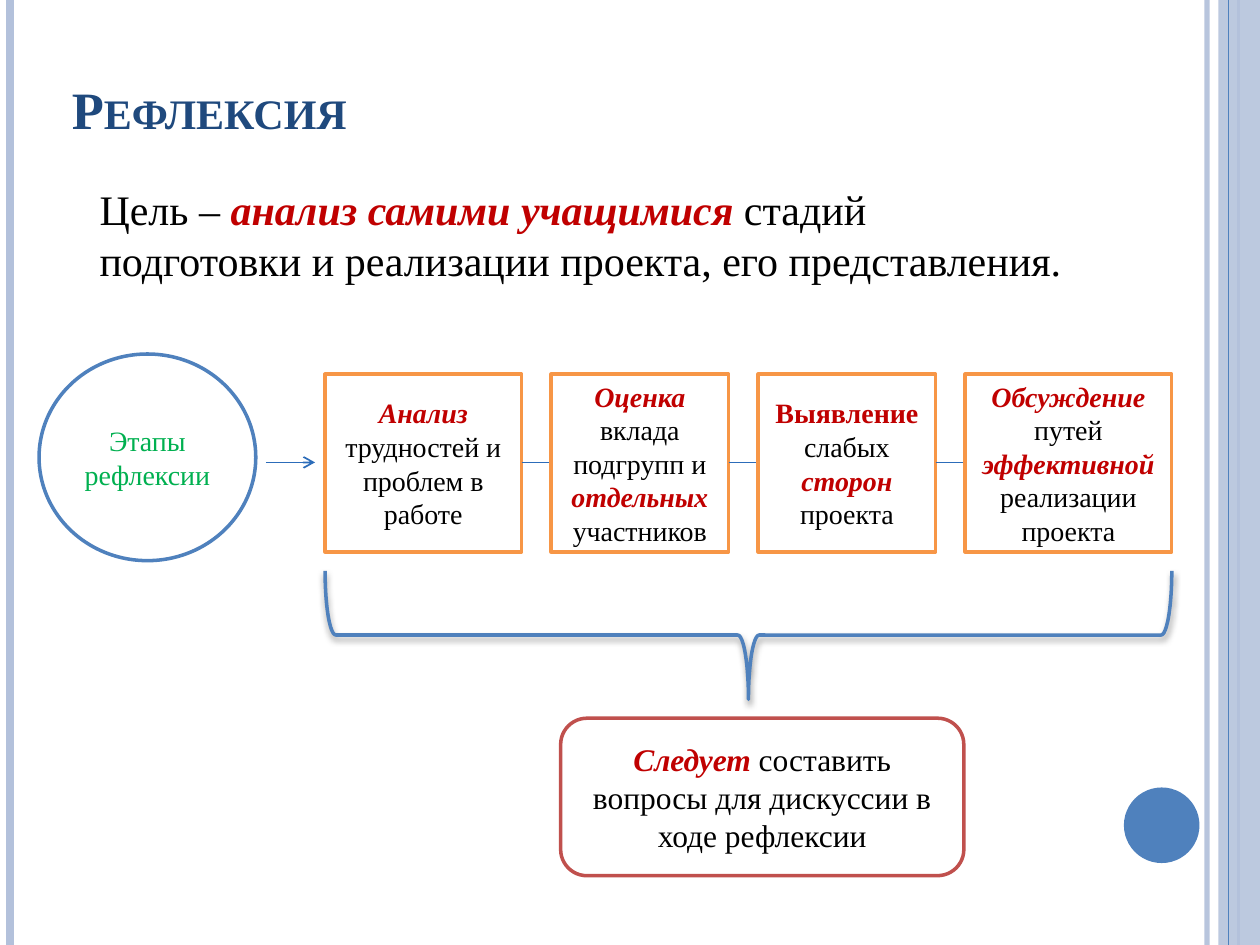
from pptx import Presentation
from pptx.dml.color import RGBColor
from pptx.enum.dml import MSO_FILL
from pptx.enum.shapes import MSO_CONNECTOR, MSO_SHAPE
from pptx.enum.text import MSO_ANCHOR, MSO_AUTO_SIZE, PP_ALIGN
from pptx.oxml import parse_xml
from pptx.oxml.ns import nsdecls, qn
from pptx.util import Inches, Pt
from lxml import etree

STRAIGHT = MSO_CONNECTOR.STRAIGHT
RECT, OVAL = MSO_SHAPE.RECTANGLE, MSO_SHAPE.OVAL
ROUND, BRACE = MSO_SHAPE.ROUNDED_RECTANGLE, MSO_SHAPE.RIGHT_BRACE
LEFT, CENTER = PP_ALIGN.LEFT, PP_ALIGN.CENTER
TOP, MIDDLE, BOTTOM = MSO_ANCHOR.TOP, MSO_ANCHOR.MIDDLE, MSO_ANCHOR.BOTTOM

THEME = {
    "font": "Times New Roman",
    "title": "1F497D", "text": "000000", "key": "C00000", "start": "00B050",
    "white": "FFFFFF", "pale": "B3C1DB", "blue": "4F81BD", "link": "2C6CB9",
    "orange": "F79646", "red": "C0504D",
    "title_size": 30, "goal_size": 24, "stage_size": 16, "advice_size": 18,
}

TITLE = [("Рефлексия", "title", "b")]
GOAL = [("Цель – ", "text", ""), ("анализ самими учащимися ", "key", "bi"),
        ("стадий подготовки и реализации проекта, его представления.", "text", "")]
START = [("Этапы рефлексии", "start", "")]
STAGES = [
    (1.56, [("Анализ ", "key", "bi"), ("трудностей и проблем в работе", "text", "")]),
    (1.41, [("Оценка ", "key", "bi"), ("вклада подгрупп и ", "text", ""),
            ("отдельных ", "key", "bi"), ("участников", "text", "")]),
    (1.41, [("Выявление ", "key", "b"), ("слабых ", "text", ""),
            ("сторон ", "key", "bi"), ("проекта", "text", "")]),
    (1.64, [("Обсуждение ", "key", "bi"), ("путей ", "text", ""),
            ("эффективной", "key", "bi"), (" реализации проекта", "text", "")]),
]
ADVICE = [("Следует", "key", "bi"),
          (" составить вопросы для дискуссии в ходе рефлексии", "text", "")]

STAGE_LEFT, STAGE_RIGHT, STAGE_TOP, STAGE_HEIGHT = 2.58, 9.30, 2.97, 1.41
LINK_Y = 3.67
BRACE_TOP, BRACE_DEPTH = 4.53, 1.02


def color(name):
    return RGBColor.from_string(THEME[name])


def set_alpha(fill, percent):
    clr = fill._xPr.find(".//" + qn("a:srgbClr"))
    etree.SubElement(clr, qn("a:alpha")).set("val", str(percent * 1000))


def write(shape, spans, size, align=CENTER, anchor=MIDDLE):
    tf = shape.text_frame
    tf.word_wrap = True
    tf.auto_size = MSO_AUTO_SIZE.NONE
    tf.vertical_anchor = anchor
    p = tf.paragraphs[0]
    p.alignment = align
    for text, tone, style in spans:
        r = p.add_run()
        r.text = text
        r.font.name = THEME["font"]
        r.font.size = Pt(THEME[size])
        r.font.color.rgb = color(tone)
        r.font.bold = "b" in style
        r.font.italic = "i" in style
    return p


def add_box(s, kind, x, y, w, h, fill=None, line=None):
    sp = s.shapes.add_shape(kind, Inches(x), Inches(y), Inches(w), Inches(h))
    sp.shadow.inherit = False
    if fill:
        sp.fill.solid()
        sp.fill.fore_color.rgb = color(fill)
    else:
        sp.fill.background()
    if line:
        sp.line.color.rgb = color(line)
        sp.line.width = Pt(2)
    else:
        sp.line.fill.background()
    return sp


def add_line(s, x1, y1, x2, y2, tone, width):
    c = s.shapes.add_connector(STRAIGHT, Inches(x1), Inches(y1), Inches(x2), Inches(y2))
    c.line.color.rgb = color(tone)
    c.line.width = Pt(width)
    etree.SubElement(c._element.spPr, qn("a:effectLst"))
    return c


def add_frame(s):
    set_alpha(add_line(s, 9.58, 0, 9.58, 7.5, "pale", 3).line.fill, 93)
    add_line(s, 0.08, 0, 0.08, 7.5, "pale", 4.5)
    add_line(s, 9.83, 0, 9.83, 7.5, "pale", 1.5)
    set_alpha(add_box(s, RECT, 9.67, 0, 0.33, 7.5, "pale").fill, 87)
    add_line(s, 9.75, 0, 9.75, 7.5, "blue", 0.75)
    add_box(s, OVAL, 8.92, 6.25, 0.6, 0.6, "blue")


def add_heading(s):
    title = s.shapes.title
    title.left, title.top = Inches(0.47), Inches(0.39)
    title.width, title.height = Inches(8.17), Inches(0.77)
    p = write(title, TITLE, "title_size", LEFT, BOTTOM)
    p.runs[0].font._element.set("cap", "small")
    goal = s.shapes.add_textbox(Inches(0.39), Inches(1.41), Inches(8.17), Inches(1.25))
    goal.text_frame.margin_left = Inches(0.4)
    write(goal, GOAL, "goal_size", LEFT, TOP).space_before = Pt(6)


def add_stages(s):
    write(add_box(s, OVAL, 0.31, 2.81, 1.72, 1.64, "white", "blue"), START, "stage_size")
    arrow = add_line(s, 2.11, LINK_Y, 2.5, LINK_Y, "link", 1)
    etree.SubElement(arrow.line._get_or_add_ln(), qn("a:tailEnd")).set("type", "arrow")
    total = sum(width for width, _ in STAGES)
    gap = (STAGE_RIGHT - STAGE_LEFT - total) / (len(STAGES) - 1)
    x = STAGE_LEFT
    for i, (width, spans) in enumerate(STAGES):
        if i:
            add_line(s, x - gap, LINK_Y, x, LINK_Y, "link", 1)
        sp = add_box(s, RECT, x, STAGE_TOP, width, STAGE_HEIGHT, "white", "orange")
        write(sp, spans, "stage_size")
        x += width + gap


def add_summary(s):
    span = STAGE_RIGHT - STAGE_LEFT
    x = STAGE_LEFT + (span - BRACE_DEPTH) / 2
    y = BRACE_TOP + (BRACE_DEPTH - span) / 2
    brace = add_box(s, BRACE, x, y, BRACE_DEPTH, span, line="blue")
    brace.rotation = 90
    effects = brace._element.spPr.find(qn("a:effectLst"))
    effects.append(parse_xml(
        f'<a:outerShdw {nsdecls("a")} blurRad="{Pt(4)}" dist="{Pt(2)}" dir="5400000" '
        f'rotWithShape="0"><a:srgbClr val="{THEME["text"]}"><a:alpha val="40000"/>'
        '</a:srgbClr></a:outerShdw>'))
    write(add_box(s, ROUND, 4.45, 5.7, 3.2, 1.25, "white", "red"), ADVICE, "advice_size")


def main():
    prs = Presentation()
    prs.slide_width, prs.slide_height = Inches(10), Inches(7.5)
    s = prs.slides.add_slide(prs.slide_layouts[5])
    add_frame(s)
    add_heading(s)
    add_stages(s)
    add_summary(s)
    prs.save("out.pptx")


if __name__ == "__main__":
    main()
